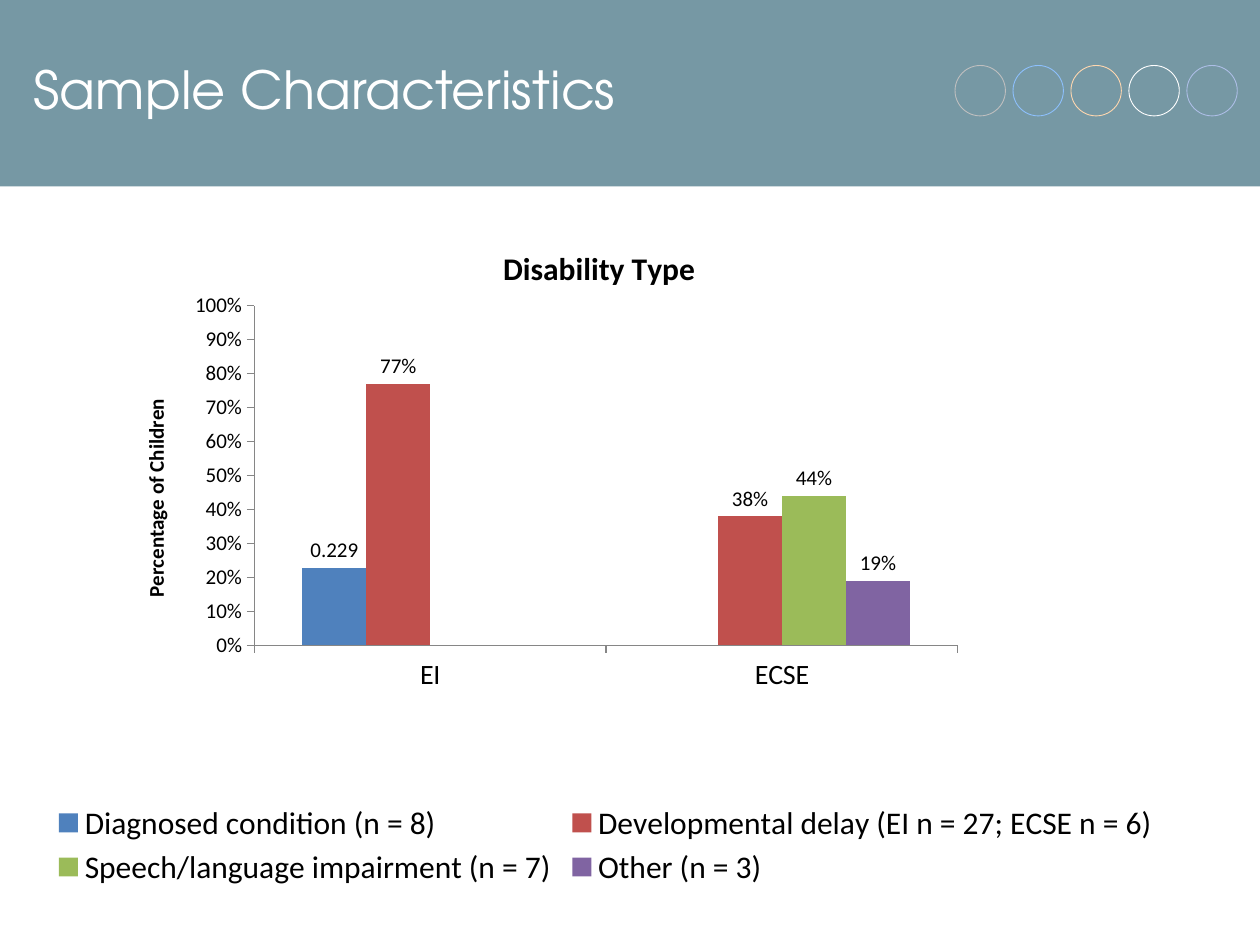
import pptx
import pptx.util
import pptx.chart.data
import pptx.dml.color
import pptx.enum.chart
import pptx.enum.shapes
import pptx.enum.text
import pptx.oxml
import pptx.oxml.ns

Inches = pptx.util.Inches
Pt = pptx.util.Pt

COLOURS = {
    "band": "7698A4", "white": "FFFFFF", "black": "000000", "axis": "868686",
    "grey": "BFBFBF", "sky": "8DC0FD", "peach": "FFD7AF", "lilac": "ADBEE6",
    "blue": "4F81BD", "red": "C0504D", "green": "9BBB59", "purple": "8064A2",
}
RINGS = ["grey", "sky", "peach", "white", "lilac"]
CATEGORIES = ["EI", "ECSE"]
SERIES = [
    ("Diagnosed condition (n = 8)", [0.229, None], "blue", "General"),
    ("Developmental delay (EI n = 27; ECSE n = 6)", [0.77, 0.38], "red", "0%"),
    ("Speech/language impairment (n = 7)", [None, 0.44], "green", "0%"),
    ("Other (n = 3)", [None, 0.19], "purple", "0%"),
]


def colour(name):
    return pptx.dml.color.RGBColor.from_string(COLOURS[name])


def apply(target, values):
    for name, value in values.items():
        setattr(target, name, value)


def style_font(font, size, shade="black", face="Calibri", bold=False):
    apply(font, {"size": Pt(size), "name": face, "bold": bold})
    font.color.rgb = colour(shade)


def add_shape(page, kind, bounds, fill=None, line=None):
    shape = page.shapes.add_shape(kind, *map(Inches, bounds))
    shape.shadow.inherit = False
    if fill:
        shape.fill.solid()
        shape.fill.fore_color.rgb = colour(fill)
    else:
        shape.fill.background()
    if line:
        shape.line.color.rgb = colour(line)
        shape.line.width = Pt(0.5)
    else:
        shape.line.fill.background()


def add_title(page, text):
    box = page.shapes.add_textbox(*map(Inches, (0.17, 0.08, 7.33, 1.25)))
    frame = box.text_frame
    apply(frame, {"word_wrap": True,
                  "vertical_anchor": pptx.enum.text.MSO_ANCHOR.MIDDLE})
    span = frame.paragraphs[0].add_run()
    span.text = text
    style_font(span.font, 30, "white", "TeX Gyre Adventor")


def set_layout(parent, index, settings):
    old = parent.find(pptx.oxml.ns.qn("c:layout"))
    if old is not None:
        parent.remove(old)
    items = "".join(f'<c:{tag} val="{value}"/>' for tag, value in settings.items())
    parent.insert(index, pptx.oxml.parse_xml(
        f'<c:layout {pptx.oxml.ns.nsdecls("c")}>'
        f"<c:manualLayout>{items}</c:manualLayout></c:layout>"))


def add_chart_title(owner, text, size):
    frame = owner.text_frame
    frame.text = text
    style_font(frame.paragraphs[0].runs[0].font, size, bold=True)


def style_axis(axis, size):
    apply(axis, {"has_major_gridlines": False,
                 "major_tick_mark": pptx.enum.chart.XL_TICK_MARK.OUTSIDE,
                 "minor_tick_mark": pptx.enum.chart.XL_TICK_MARK.NONE})
    style_font(axis.tick_labels.font, size)
    axis.format.line.color.rgb = colour("axis")
    axis.format.line.width = Pt(0.75)


def style_series(series, shade, number_format):
    series.format.fill.solid()
    series.format.fill.fore_color.rgb = colour(shade)
    labels = series.data_labels
    apply(labels, {"show_value": True, "number_format": number_format,
                   "number_format_is_linked": False,
                   "position": pptx.enum.chart.XL_LABEL_POSITION.OUTSIDE_END})
    style_font(labels.font, 12)


def add_disability_chart(page):
    data = pptx.chart.data.CategoryChartData()
    data.categories = CATEGORIES
    for name, values, _, _ in SERIES:
        data.add_series(name, values)
    chart = page.shapes.add_chart(
        pptx.enum.chart.XL_CHART_TYPE.COLUMN_CLUSTERED,
        *map(Inches, (-0.33, 1.75, 10.17, 5.33)), data).chart
    style_font(chart.font, 10)
    chart.has_title = True
    add_chart_title(chart.chart_title, "Disability Type", 18)

    plot = chart.plots[0]
    apply(plot, {"gap_width": 150, "overlap": 0, "vary_by_categories": False})
    for series, (_, _, shade, number_format) in zip(plot.series, SERIES):
        style_series(series, shade, number_format)

    style_axis(chart.category_axis, 16)
    axis = chart.value_axis
    style_axis(axis, 12)
    apply(axis, {"minimum_scale": 0, "maximum_scale": 1, "major_unit": 0.1})
    apply(axis.tick_labels, {"number_format": "0%", "number_format_is_linked": False})
    add_chart_title(axis.axis_title, "Percentage of Children", 12)

    chart.has_legend = True
    apply(chart.legend, {"position": pptx.enum.chart.XL_LEGEND_POSITION.BOTTOM,
                         "include_in_layout": False})
    style_font(chart.legend.font, 18)

    edges = {"xMode": "edge", "yMode": "edge"}
    set_layout(chart.plots[0]._element.getparent(), 0,
               {"layoutTarget": "inner", **edges,
                "x": 0.231, "y": 0.127, "w": 0.549, "h": 0.506})
    set_layout(chart.legend._element, 1,
               {**edges, "x": 0.07, "y": 0.86, "w": 0.87, "h": 0.14})
    set_layout(axis.axis_title._element, 1, {**edges, "x": 0.14, "y": 0.26})


def main():
    deck = pptx.Presentation()
    apply(deck, {"slide_width": Inches(10), "slide_height": Inches(7.5)})
    page = deck.slides.add_slide(deck.slide_layouts[6])
    kinds = pptx.enum.shapes.MSO_SHAPE
    add_shape(page, kinds.RECTANGLE, (0, -0.02, 10, 1.5), fill="band")
    for index, shade in enumerate(RINGS):
        add_shape(page, kinds.OVAL, (7.58 + 0.46 * index, 0.52, 0.4, 0.4), line=shade)
    add_title(page, "Sample Characteristics")
    add_disability_chart(page)
    deck.save("out.pptx")


if __name__ == "__main__":
    main()
